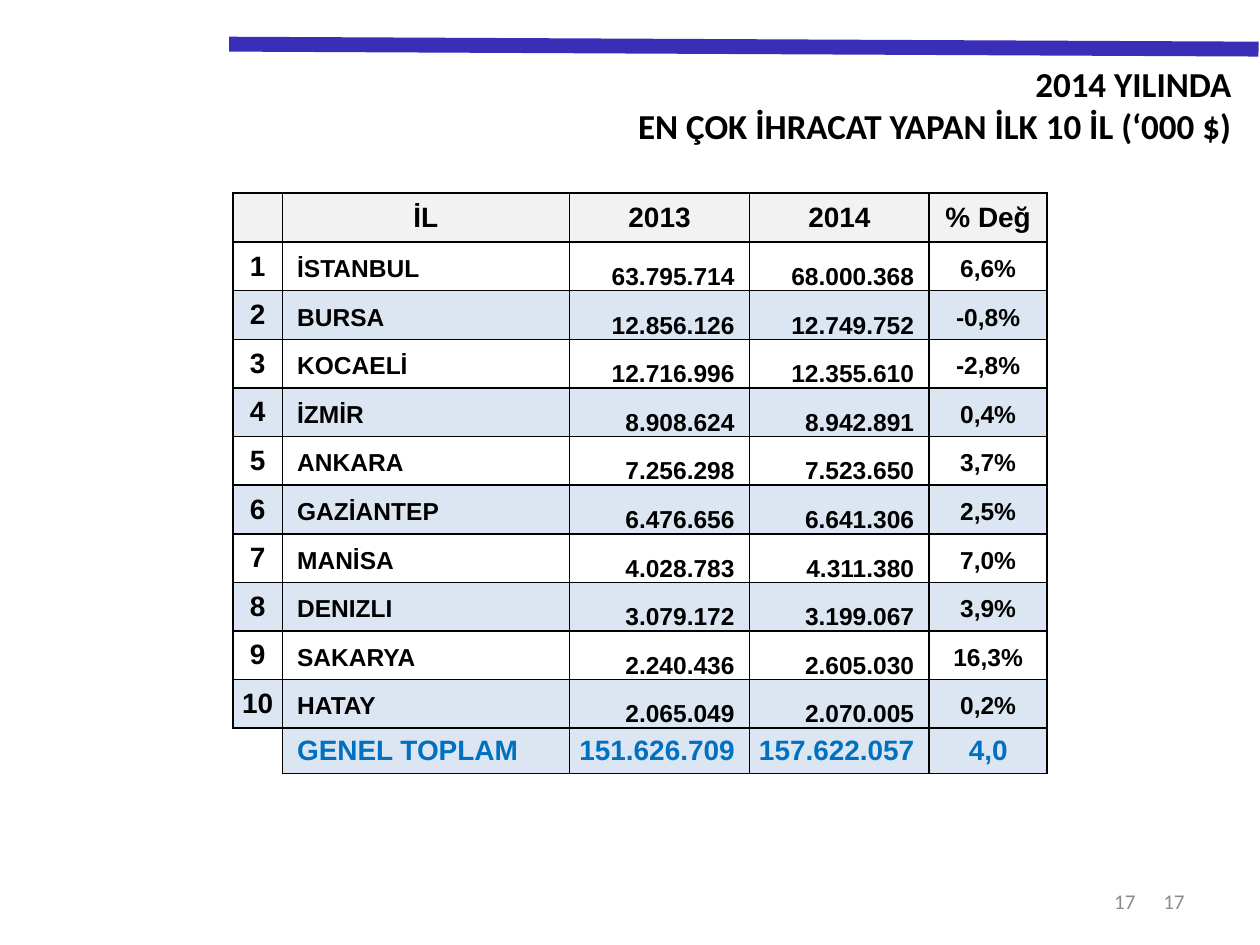
from lxml.etree import SubElement
from pptx import Presentation
from pptx.dml.color import RGBColor
from pptx.enum.shapes import MSO_CONNECTOR
from pptx.enum.text import MSO_ANCHOR, PP_ALIGN
from pptx.oxml.ns import qn
from pptx.util import Cm, Pt

BLACK = RGBColor(0x00, 0x00, 0x00)
GREY = RGBColor(0x8C, 0x8C, 0x8C)
INDIGO = RGBColor(0x38, 0x2E, 0xB8)
HEADER_FILL = RGBColor(0xF2, 0xF2, 0xF2)
BAND_FILL = RGBColor(0xDC, 0xE6, 0xF2)
TOTAL_BLUE = RGBColor(0x00, 0x70, 0xC0)

HEADERS = ["", "İL", "2013", "2014", "% Değ"]
PROVINCES = [
    ("İSTANBUL", "63.795.714", "68.000.368", "6,6%"),
    ("BURSA", "12.856.126", "12.749.752", "-0,8%"),
    ("KOCAELİ", "12.716.996", "12.355.610", "-2,8%"),
    ("İZMİR", "8.908.624", "8.942.891", "0,4%"),
    ("ANKARA", "7.256.298", "7.523.650", "3,7%"),
    ("GAZİANTEP", "6.476.656", "6.641.306", "2,5%"),
    ("MANİSA", "4.028.783", "4.311.380", "7,0%"),
    ("DENIZLI", "3.079.172", "3.199.067", "3,9%"),
    ("SAKARYA", "2.240.436", "2.605.030", "16,3%"),
    ("HATAY", "2.065.049", "2.070.005", "0,2%"),
]
TOTAL = ["", "GENEL TOPLAM", "151.626.709", "157.622.057", "4,0"]
COLUMN_WIDTHS = [0.99, 5.79, 3.63, 3.62, 2.38]
ROW_HEIGHTS = [0.99] + [0.98] * len(PROVINCES) + [0.91]

# Margins are left, top, right, bottom in centimetres
HEADER_MARGINS = (0.25, 0.13, 0.25, 0.13)
COLUMN_FORMATS = [
    {"margins": (0, 0, 0, 0), "alignment": PP_ALIGN.CENTER},
    {"margins": (0.3, 0.02, 0.02, 0), "alignment": PP_ALIGN.LEFT},
    {"margins": (0.02, 0.02, 0.3, 0), "alignment": PP_ALIGN.RIGHT},
    {"margins": (0.02, 0.02, 0.3, 0), "alignment": PP_ALIGN.RIGHT},
    {"margins": (0.02, 0.02, 0.02, 0), "alignment": PP_ALIGN.CENTER},
]


def set_attributes(target, values):
    for name, value in values.items():
        setattr(target, name, value)


def set_font(font, size, color, name="Arial", bold=True):
    set_attributes(font, {"name": name, "size": Pt(size), "bold": bold})
    font.color.rgb = color


def add_text(slide, box, lines, size, color, bold, anchor):
    """Right-aligned text box, one paragraph for each line."""
    shape = slide.shapes.add_textbox(*(Cm(length) for length in box))
    frame = shape.text_frame
    set_attributes(frame, {"word_wrap": True, "vertical_anchor": anchor})
    frame.text = "\n".join(lines)
    for paragraph in frame.paragraphs:
        paragraph.alignment = PP_ALIGN.RIGHT
        set_font(paragraph.runs[0].font, size, color, "Calibri", bold)
    return frame


def add_page_number(slide, box):
    add_text(slide, box, ["17"], 12, GREY, False, MSO_ANCHOR.MIDDLE)


def add_title_rule(slide, box):
    left, top, width, height = box
    rule = slide.shapes.add_connector(
        MSO_CONNECTOR.STRAIGHT, Cm(left), Cm(top), Cm(left + width), Cm(top + height))
    rule.line.color.rgb = INDIGO
    rule.line.width = Pt(8.5)
    SubElement(rule._element.spPr, qn("a:effectLst"))


def add_title(slide, box):
    lines = ["2014 YILINDA", "EN ÇOK İHRACAT YAPAN İLK 10 İL (‘000 $)"]
    frame = add_text(slide, box, lines, 20, BLACK, True, MSO_ANCHOR.TOP)
    # The first line ends a little before the second
    frame.paragraphs[0]._p.get_or_add_pPr().set("marR", str(Cm(0.32)))


def set_borders(cell, visible_sides):
    properties = cell._tc.get_or_add_tcPr()
    for position, side in enumerate("LRTB"):
        line = properties.makeelement(qn(f"a:ln{side}"), {"w": str(Pt(1))})
        properties.insert(position, line)
        if side in visible_sides:
            fill = SubElement(line, qn("a:solidFill"))
            SubElement(fill, qn("a:srgbClr"), val=str(BLACK))
        else:
            SubElement(line, qn("a:noFill"))


def fill_cell(cell, text, margins, alignment, anchor, fill, size, color, spacing):
    names = ("margin_left", "margin_top", "margin_right", "margin_bottom")
    set_attributes(cell, dict(zip(names, map(Cm, margins))))
    cell.vertical_anchor = anchor
    if fill is None:
        cell.fill.background()
    else:
        cell.fill.solid()
        cell.fill.fore_color.rgb = fill
    if text:
        cell.text = text
        paragraph = cell.text_frame.paragraphs[0]
        set_attributes(paragraph, {"alignment": alignment, "line_spacing": spacing})
        set_font(paragraph.runs[0].font, size, color)


def add_export_table(slide, box):
    rows = [HEADERS]
    rows += [(str(rank), *values) for rank, values in enumerate(PROVINCES, 1)]
    rows.append(TOTAL)
    table = slide.shapes.add_table(
        len(rows), len(HEADERS), *(Cm(length) for length in box)).table
    set_attributes(table, {"first_row": False, "horz_banding": False})
    for column, width in zip(table.columns, COLUMN_WIDTHS):
        column.width = Cm(width)
    for row, height in zip(table.rows, ROW_HEIGHTS):
        row.height = Cm(height)

    last = len(rows) - 1
    for row_index, values in enumerate(rows):
        for column_index, text in enumerate(values):
            style = {"anchor": MSO_ANCHOR.MIDDLE, "size": 16, "color": BLACK,
                     "spacing": None, **COLUMN_FORMATS[column_index]}
            style["fill"] = BAND_FILL if row_index % 2 == 0 else None
            sides = "LRTB"
            if row_index == 0:
                style.update(fill=HEADER_FILL, alignment=PP_ALIGN.CENTER)
                if text:
                    style["margins"] = HEADER_MARGINS
            elif row_index == last:
                style.update(fill=BAND_FILL if text else None, color=TOTAL_BLUE)
                sides = "LRTB" if text else "RT"
            elif column_index > 0:
                style.update(size=14, spacing=1.15)
                if column_index in (2, 3):
                    style["anchor"] = MSO_ANCHOR.BOTTOM
            cell = table.cell(row_index, column_index)
            fill_cell(cell, text, **style)
            set_borders(cell, sides)


def main():
    presentation = Presentation()
    presentation.slide_width = Cm(25.4)
    presentation.slide_height = Cm(19.05)
    slide = presentation.slides.add_slide(presentation.slide_layouts[6])

    # Boxes are left, top, width, height in centimetres
    add_page_number(slide, (18.21, 17.65, 5.92, 1.02))
    add_title_rule(slide, (4.62, 0.89, 20.75, 0.1))
    add_page_number(slide, (17.81, 17.65, 5.33, 1.02))
    add_title(slide, (2.69, 1.14, 22.71, 1.96))
    add_export_table(slide, (4.7, 3.89, sum(COLUMN_WIDTHS), sum(ROW_HEIGHTS)))

    presentation.save("out.pptx")


if __name__ == "__main__":
    main()
